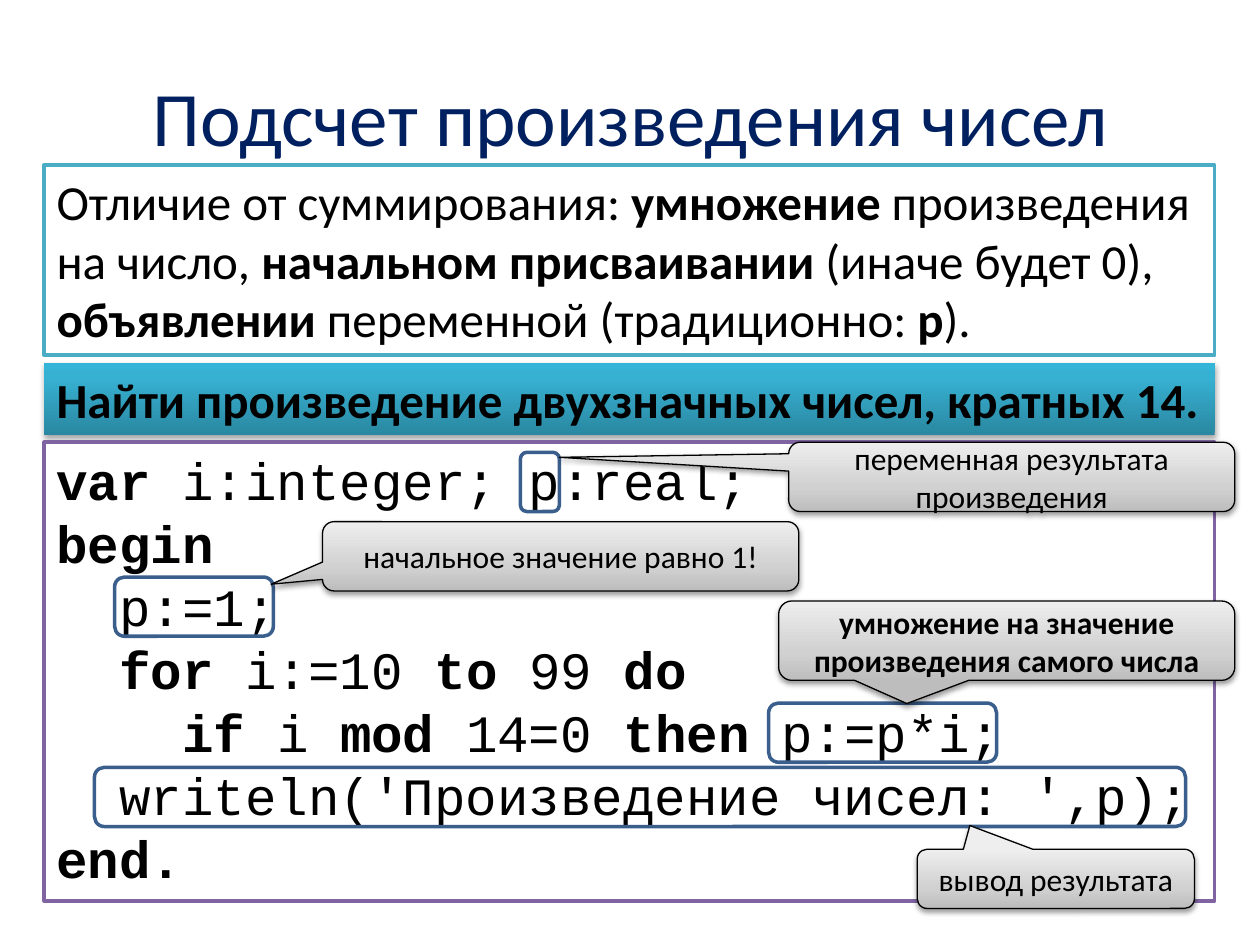
from dataclasses import dataclass

from lxml.etree import SubElement
from pptx import Presentation
from pptx.dml.color import RGBColor
from pptx.enum.shapes import MSO_SHAPE as Shape
from pptx.enum.text import MSO_ANCHOR as Anchor, PP_ALIGN as Align
from pptx.oxml.ns import qn
from pptx.util import Inches, Pt


@dataclass(frozen=True)
class Theme:
    font: str = "Calibri"
    code_font: str = "Courier New"
    title_size: int = 44
    body_size: int = 28
    code_size: int = 30
    note_size: int = 18
    ink: str = "000000"
    title: str = "002060"
    paper: str = "FFFFFF"
    rule_edge: str = "4BACC6"
    code_edge: str = "8064A2"
    mark_edge: str = "3A5F8C"
    task_fill: tuple = ((0, "2A88A2"), (80, "37B1D2"), (100, "34B4D6"))
    note_fill: tuple = ((0, "BDBDBD"), (35, "D1D1D1"), (100, "EEEEEE"))
    task_shadow: tuple = (35, 3.1, 1.8)
    note_shadow: tuple = (38, 3.1, 1.6)


THEME = Theme()
PANEL_LEFT, PANEL_WIDTH = 0.35, 9.29
MARK_HEIGHT = 0.47

TITLE = "Подсчет произведения чисел"
DIFFERENCE = (
    "Отличие от суммирования: **умножение** произведения на число, "
    "**начальном присваивании **(иначе будет 0), "
    "**объявлении** переменной (традиционно: **p**)."
)
TASK = "**Найти произведение двухзначных чисел, кратных 14.**"
PROGRAM = [
    "**var** i:integer; p:real;",
    "**begin**",
    "  p:=1;",
    "  **for **i:=10 **to** 99 **do**",
    "    **if **i **mod **14=0 **then** p:=p*i;",
    "  writeln('Произведение чисел: ',p);",
    "**end.**",
]
REMARKS = [
    {"mark": (4.13, 3.59, 0.31), "note": "переменная результата произведения",
     "box": (6.26, 3.51, 3.54, 0.55), "tip": (-1.014, -0.282)},
    {"mark": (0.91, 4.58, 1.26), "note": "начальное значение равно 1!",
     "box": (2.56, 4.14, 3.78, 0.55), "tip": (-0.608, 0.403)},
    {"mark": (6.1, 5.58, 1.81), "note": "**умножение на значение произведения самого числа**",
     "box": (6.18, 4.77, 3.62, 0.63), "tip": (-0.219, 0.792)},
    {"mark": (0.75, 6.09, 8.66), "note": "вывод результата",
     "box": (7.28, 6.74, 2.2, 0.47), "tip": (-0.31, -0.9)},
]


def color(value):
    return RGBColor.from_string(value)


def write(shape, lines, size, font=THEME.font, ink=THEME.ink,
          align=Align.LEFT, anchor=Anchor.TOP):
    frame = shape.text_frame
    frame.word_wrap = True
    frame.vertical_anchor = anchor
    for number, line in enumerate(lines):
        paragraph = frame.add_paragraph() if number else frame.paragraphs[0]
        paragraph.alignment = align
        for position, words in enumerate(line.split("**")):
            if words:
                run = paragraph.add_run()
                run.text = words
                run.font.name = font
                run.font.size = Pt(size)
                run.font.bold = position % 2 == 1
                run.font.color.rgb = color(ink)


def fill_gradient(shape, stops):
    shape.fill.gradient()
    shape.fill.gradient_angle = 90
    stop_list = shape._element.spPr.find(".//" + qn("a:gsLst"))
    for stop in list(stop_list):
        stop_list.remove(stop)
    for percent, value in stops:
        stop = SubElement(stop_list, qn("a:gs"), pos=str(percent * 1000))
        SubElement(stop, qn("a:srgbClr"), val=value)


def cast_shadow(shape, opacity, blur, distance):
    effects = shape._element.spPr.find(qn("a:effectLst"))
    shadow = SubElement(effects, qn("a:outerShdw"), blurRad=str(Pt(blur)),
                        dist=str(Pt(distance)), dir="5400000", rotWithShape="0")
    tint = SubElement(shadow, qn("a:srgbClr"), val=THEME.ink)
    SubElement(tint, qn("a:alpha"), val=str(opacity * 1000))


def add_box(slide, kind, box, fill=None, edge=None, edge_width=2, shadow=None):
    shape = slide.shapes.add_shape(kind, *map(Inches, box))
    shape.shadow.inherit = False
    if fill is None:
        shape.fill.background()
    elif isinstance(fill, tuple):
        fill_gradient(shape, fill)
    else:
        shape.fill.solid()
        shape.fill.fore_color.rgb = color(fill)
    if edge:
        shape.line.color.rgb = color(edge)
        shape.line.width = Pt(edge_width)
    else:
        shape.line.fill.background()
    if shadow:
        cast_shadow(shape, *shadow)
    return shape


def add_panel(slide, top, height, **look):
    return add_box(slide, Shape.RECTANGLE, (PANEL_LEFT, top, PANEL_WIDTH, height), **look)


def add_remark(slide, remark):
    add_box(slide, Shape.ROUNDED_RECTANGLE, (*remark["mark"], MARK_HEIGHT),
            edge=THEME.mark_edge)
    note = add_box(slide, Shape.ROUNDED_RECTANGULAR_CALLOUT, remark["box"],
                   fill=THEME.note_fill, edge=THEME.ink, edge_width=0.75,
                   shadow=THEME.note_shadow)
    note.adjustments[0], note.adjustments[1] = remark["tip"]
    write(note, [remark["note"]], THEME.note_size, align=Align.CENTER, anchor=Anchor.MIDDLE)


def main():
    deck = Presentation()
    deck.slide_width, deck.slide_height = Inches(10), Inches(7.5)
    slide = deck.slides.add_slide(deck.slide_layouts[6])

    heading = slide.shapes.add_textbox(*map(Inches, (0.51, 0.29, 9, 1.25)))
    write(heading, [TITLE], THEME.title_size, ink=THEME.title,
          align=Align.CENTER, anchor=Anchor.MIDDLE)
    difference = add_panel(slide, 1.31, 1.51, fill=THEME.paper, edge=THEME.rule_edge)
    write(difference, [DIFFERENCE], THEME.body_size)
    task = add_panel(slide, 2.88, 0.57, fill=THEME.task_fill, shadow=THEME.task_shadow)
    write(task, [TASK], THEME.body_size)
    program = add_panel(slide, 3.51, 3.64, fill=THEME.paper, edge=THEME.code_edge)
    write(program, PROGRAM, THEME.code_size, font=THEME.code_font)
    for remark in REMARKS:
        add_remark(slide, remark)

    deck.save("out.pptx")


if __name__ == "__main__":
    main()
